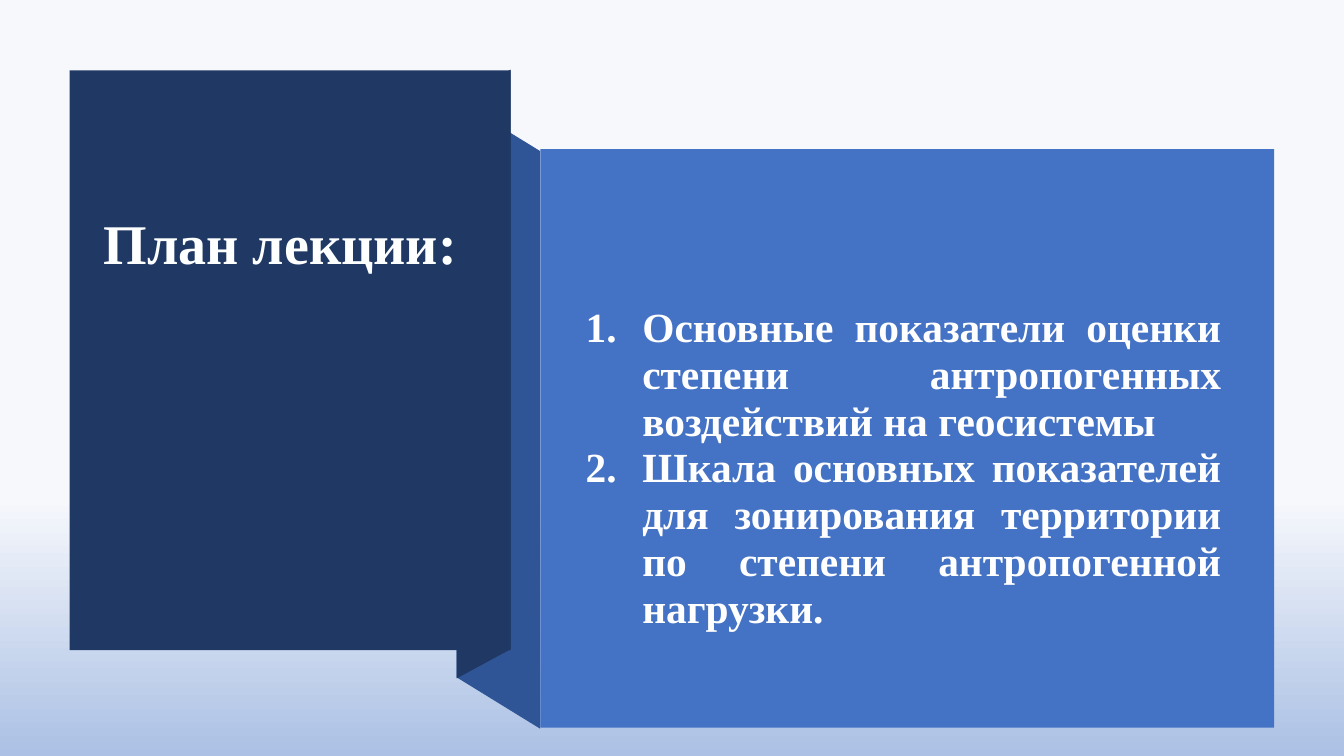
import dataclasses

import pptx
import pptx.dml.color
import pptx.enum.shapes
import pptx.enum.text
import pptx.oxml
import pptx.oxml.ns
import pptx.util

WIDTH = pptx.util.Inches(13.333)
HEIGHT = pptx.util.Inches(7.5)
FONT = "Times New Roman"
COLORS = {
    "sky": "F6F8FC",
    "haze": "ABC0E4",
    "fold": "2F5597",
    "navy": "203864",
    "blue": "4472C4",
    "white": "FFFFFF",
    "title": "FEFFFF",
}
TOPICS = [
    "Основные показатели оценки степени антропогенных воздействий на геосистемы",
    "Шкала основных показателей для зонирования территории по степени антропогенной нагрузки.",
]


@dataclasses.dataclass(frozen=True)
class Area:
    left: float
    top: float
    width: float
    height: float

    def lengths(self) -> tuple[int, int, int, int]:
        return across(self.left), down(self.top), across(self.width), down(self.height)


@dataclasses.dataclass(frozen=True)
class Panel:
    area: Area
    color: str


@dataclasses.dataclass(frozen=True)
class Fold:
    corners: tuple[tuple[float, float], ...]
    color: str


FOLDS = [
    Fold(((40.2, 96.4), (33.98, 89.6), (33.98, 13.2), (40.2, 20)), "fold"),
    Fold(((38, 85.87), (33.98, 89.73), (33.98, 13.07), (38, 9.2)), "navy"),
]
PANELS = [
    Panel(Area(5.18, 9.33, 32.82, 76.67), "navy"),
    Panel(Area(40.2, 19.73, 54.6, 76.53), "blue"),
]
TITLE_AREA = Area(6.98, 26.93, 50, 10.27)
TOPICS_AREA = Area(42.83, 39.73, 48.83, 44)


def across(percent: float) -> int:
    return round(WIDTH * percent / 100)


def down(percent: float) -> int:
    return round(HEIGHT * percent / 100)


def color_of(name: str) -> pptx.dml.color.RGBColor:
    return pptx.dml.color.RGBColor.from_string(COLORS[name])


def paint(shape, color: str) -> None:
    shape.shadow.inherit = False
    shape.fill.solid()
    shape.fill.fore_color.rgb = color_of(color)
    shape.line.fill.background()


def draw_fold(page, fold: Fold) -> None:
    points = [(across(x), down(y)) for x, y in fold.corners]
    builder = page.shapes.build_freeform(*points[0])
    builder.add_line_segments(points[1:], close=True)
    paint(builder.convert_to_shape(), fold.color)


def draw_panel(page, panel: Panel) -> None:
    rectangle = pptx.enum.shapes.MSO_SHAPE.RECTANGLE
    paint(page.shapes.add_shape(rectangle, *panel.area.lengths()), panel.color)


def style(para, size: float, color: str) -> None:
    para.font.name = FONT
    para.font.size = pptx.util.Pt(size)
    para.font.bold = True
    para.font.color.rgb = color_of(color)


def number(para) -> None:
    properties = para._p.get_or_add_pPr()
    indent = across(4.22)
    properties.set("marL", str(indent))
    properties.set("indent", str(-indent))
    bullet = pptx.oxml.parse_xml(
        f'<a:buAutoNum {pptx.oxml.ns.nsdecls("a")} type="arabicPeriod"/>'
    )
    properties.insert_element_before(bullet, "a:tabLst", "a:defRPr", "a:extLst")


def draw_background(page) -> None:
    fill = page.background.fill
    fill.gradient()
    fill.gradient_angle = 270
    for stop, position, color in zip(fill.gradient_stops, (0.66, 1), ("sky", "haze")):
        stop.position = position
        stop.color.rgb = color_of(color)


def draw_title(page) -> None:
    title = page.shapes.title
    title.left, title.top, title.width, title.height = TITLE_AREA.lengths()
    frame = title.text_frame
    frame.word_wrap = True
    frame.auto_size = pptx.enum.text.MSO_AUTO_SIZE.NONE
    frame.vertical_anchor = pptx.enum.text.MSO_ANCHOR.MIDDLE
    para = frame.paragraphs[0]
    para.text = "План лекции:"
    para.alignment = pptx.enum.text.PP_ALIGN.LEFT
    style(para, 40, "title")


def draw_topics(page) -> None:
    frame = page.shapes.add_textbox(*TOPICS_AREA.lengths()).text_frame
    frame.word_wrap = True
    for index, topic in enumerate(TOPICS):
        para = frame.add_paragraph() if index else frame.paragraphs[0]
        para.text = topic
        para.alignment = pptx.enum.text.PP_ALIGN.JUSTIFY
        para.line_spacing = 0.94
        style(para, 29.6, "white")
        number(para)


def main() -> None:
    deck = pptx.Presentation()
    deck.slide_width, deck.slide_height = WIDTH, HEIGHT
    page = deck.slides.add_slide(deck.slide_layouts.get_by_name("Title Only"))
    draw_background(page)
    for fold in FOLDS:
        draw_fold(page, fold)
    for panel in PANELS:
        draw_panel(page, panel)
    draw_topics(page)
    draw_title(page)
    page.shapes._spTree.append(page.shapes.title._element)
    deck.save("out.pptx")


if __name__ == "__main__":
    main()
